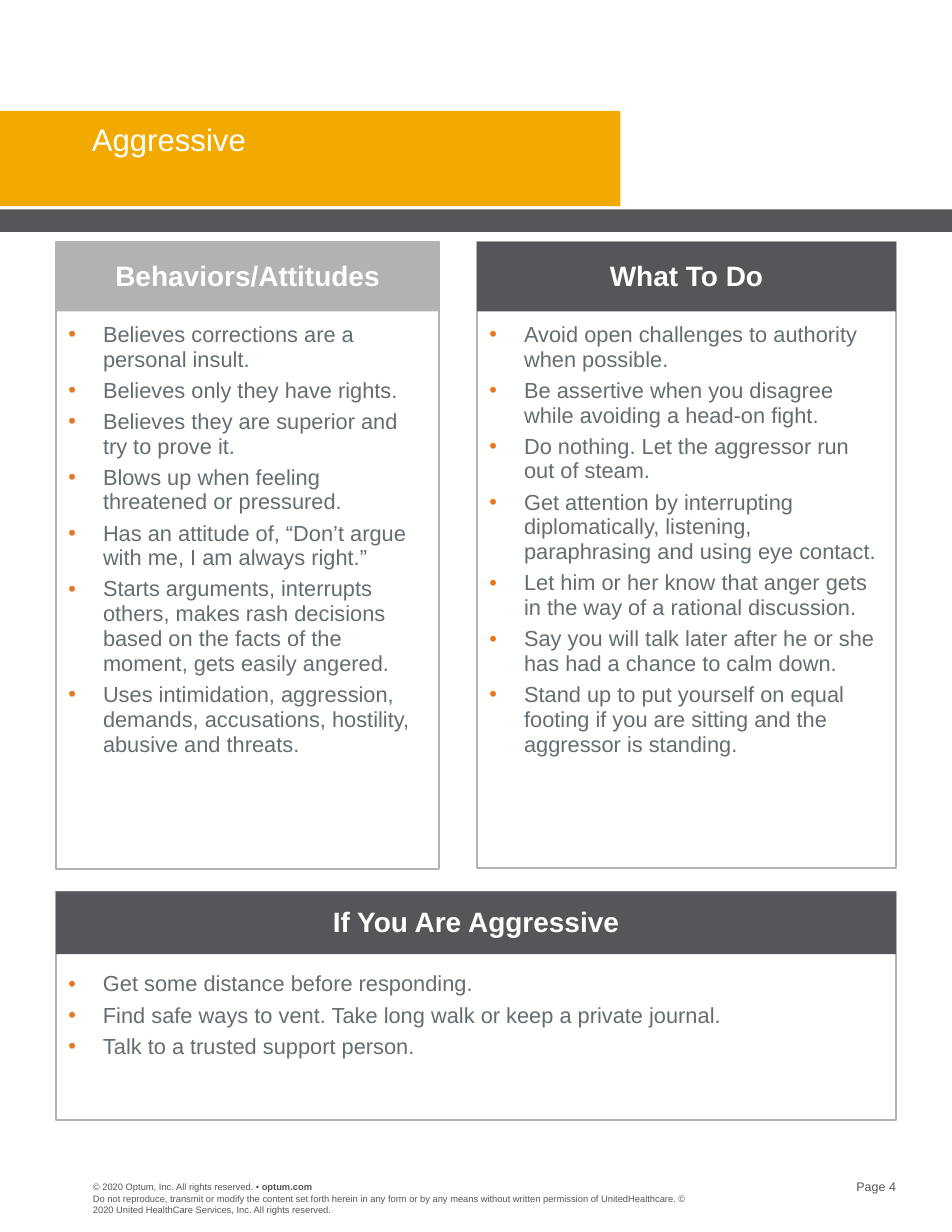
from dataclasses import dataclass

import pptx
import pptx.dml.color
import pptx.enum.shapes
import pptx.enum.text
import pptx.oxml.ns
import pptx.util
from lxml import etree
from pptx.util import Inches

ALIGN = pptx.enum.text.PP_ALIGN
ANCHOR = pptx.enum.text.MSO_ANCHOR


@dataclass(frozen=True)
class Theme:
    font: str = "Arial"
    amber: str = "F2AA00"
    dark: str = "55565A"
    grey: str = "B1B3B3"
    body: str = "646D72"
    bullet: str = "E87722"
    white: str = "FFFFFF"
    title_size: int = 20
    heading_size: int = 18
    body_size: int = 14
    page_size: int = 8
    legal_size: int = 6


THEME = Theme()
LEFT, RIGHT = 0.5, 8.0
TEXT_LEFT = 0.83

BEHAVIORS = [
    "Believes corrections are a personal insult.",
    "Believes only they have rights.",
    "Believes they are superior and try to prove it.",
    "Blows up when feeling threatened or pressured.",
    "Has an attitude of, “Don’t argue with me, I am always right.”",
    "Starts arguments, interrupts others, makes rash decisions based on "
    "the facts of the moment, gets easily angered.",
    "Uses intimidation, aggression, demands, accusations, hostility, "
    "abusive and threats.",
]
ACTIONS = [
    "Avoid open challenges to authority when possible.",
    "Be assertive when you disagree while avoiding a head-on fight.",
    "Do nothing. Let the aggressor run out of steam.",
    "Get attention by interrupting diplomatically, listening, "
    "paraphrasing and using eye contact.",
    "Let him or her know that anger gets in the way of a rational discussion.",
    "Say you will talk later after he or she has had a chance to calm down.",
    "Stand up to put yourself on equal footing if you are sitting and the "
    "aggressor is standing.",
]
SELF_HELP = [
    "Get some distance before responding.",
    "Find safe ways to vent. Take long walk or keep a private journal.",
    "Talk to a trusted support person.",
]
DISCLAIMER = (
    "Do not reproduce, transmit or modify the content set forth herein in any "
    "form or by any means without written permission of UnitedHealthcare. "
    "© 2020 United HealthCare Services, Inc. All rights reserved."
)


def rgb(value):
    return pptx.dml.color.RGBColor.from_string(value)


def format_run(run, size, color, bold=False):
    run.font.name = THEME.font
    run.font.size = pptx.util.Pt(size)
    run.font.color.rgb = rgb(color)
    run.font.bold = bold


def set_frame(frame, anchor, left=0, top=0, right=0, bottom=0):
    frame.word_wrap = True
    frame.vertical_anchor = anchor
    frame.margin_left, frame.margin_top = Inches(left), Inches(top)
    frame.margin_right, frame.margin_bottom = Inches(right), Inches(bottom)


def add_box(slide, left, top, width, height, fill=None, line=None):
    box = slide.shapes.add_shape(
        pptx.enum.shapes.MSO_SHAPE.RECTANGLE,
        Inches(left), Inches(top), Inches(width), Inches(height))
    box.shadow.inherit = False
    if fill:
        box.fill.solid()
        box.fill.fore_color.rgb = rgb(fill)
    else:
        box.fill.background()
    if line:
        box.line.color.rgb = rgb(line)
        box.line.width = pptx.util.Pt(1)
    else:
        box.line.fill.background()
    return box


def add_bullet(paragraph):
    properties = paragraph._p.get_or_add_pPr()
    properties.set("marL", str(Inches(0.31)))
    properties.set("indent", str(-Inches(0.31)))
    qn = pptx.oxml.ns.qn
    color = etree.SubElement(properties, qn("a:buClr"))
    etree.SubElement(color, qn("a:srgbClr"), val=THEME.bullet)
    etree.SubElement(properties, qn("a:buFont"), typeface=THEME.font)
    etree.SubElement(properties, qn("a:buChar"), char="•")


def add_panel(slide, left, top, width, height, heading_height, color, heading, items):
    """Outlined list with a filled heading bar over its top."""
    panel = add_box(slide, left, top, width, height, line=THEME.grey)
    frame = panel.text_frame
    set_frame(frame, ANCHOR.TOP, left=0.11, top=0.72, right=0.11)
    frame.text = "\n".join(items)
    for paragraph in frame.paragraphs:
        paragraph.level = 1
        paragraph.alignment = ALIGN.LEFT
        paragraph.line_spacing = 0.95
        paragraph.space_after = pptx.util.Pt(4)
        add_bullet(paragraph)
        format_run(paragraph.runs[0], THEME.body_size, THEME.body)

    bar = add_box(slide, left, top, width, heading_height, fill=color)
    set_frame(bar.text_frame, ANCHOR.MIDDLE, bottom=0.03)
    bar.text_frame.text = heading
    paragraph = bar.text_frame.paragraphs[0]
    paragraph.alignment = ALIGN.CENTER
    format_run(paragraph.runs[0], THEME.heading_size, THEME.white, bold=True)


def add_note(slide, left, top, width, height, text, size, align=ALIGN.LEFT):
    note = slide.shapes.add_textbox(
        Inches(left), Inches(top), Inches(width), Inches(height))
    set_frame(note.text_frame, ANCHOR.TOP)
    note.text_frame.text = text
    paragraph = note.text_frame.paragraphs[0]
    paragraph.alignment = align
    format_run(paragraph.runs[0], size, THEME.dark)
    return paragraph


def place_title(slide, text):
    title = slide.shapes.title
    title.left, title.top = Inches(0.82), Inches(1.11)
    title.width, title.height = Inches(4.5), Inches(0.3)
    set_frame(title.text_frame, ANCHOR.TOP)
    title.text_frame.auto_size = pptx.enum.text.MSO_AUTO_SIZE.NONE
    title.text_frame.text = text
    paragraph = title.text_frame.paragraphs[0]
    paragraph.alignment = ALIGN.LEFT
    paragraph.line_spacing = 0.9
    format_run(paragraph.runs[0], THEME.title_size, THEME.white)
    # Bring the title in front of the band
    title.element.getparent().append(title.element)


def main():
    deck = pptx.Presentation()
    deck.slide_width, deck.slide_height = Inches(8.5), Inches(11)
    slide = deck.slides.add_slide(deck.slide_layouts.get_by_name("Title Only"))

    # Title bands
    add_box(slide, 0, 0.99, 5.54, 0.85, fill=THEME.amber)
    add_box(slide, 0, 1.87, 8.5, 0.2, fill=THEME.dark)
    place_title(slide, "Aggressive")

    # Panels
    actions_left = 4.26
    add_panel(slide, LEFT, 2.16, 3.42, 5.6, 0.62, THEME.grey,
              "Behaviors/Attitudes", BEHAVIORS)
    add_panel(slide, actions_left, 2.16, RIGHT - actions_left, 5.59, 0.62,
              THEME.dark, "What To Do", ACTIONS)
    add_panel(slide, LEFT, 7.96, RIGHT - LEFT, 2.04, 0.56, THEME.dark,
              "If You Are Aggressive", SELF_HELP)

    # Footer
    rights = add_note(slide, TEXT_LEFT, 10.55, 2, 0.1,
                      "© 2020 Optum, Inc. All rights reserved. • ", THEME.legal_size)
    site = rights.add_run()
    site.text = "optum.com"
    format_run(site, THEME.legal_size, THEME.dark, bold=True)
    add_note(slide, TEXT_LEFT, 10.65, 5.3, 0.2, DISCLAIMER, THEME.legal_size)
    add_note(slide, 7.19, 10.53, RIGHT - 7.19, 0.13, "Page 4", THEME.page_size,
             ALIGN.RIGHT)

    deck.save("out.pptx")


if __name__ == "__main__":
    main()
